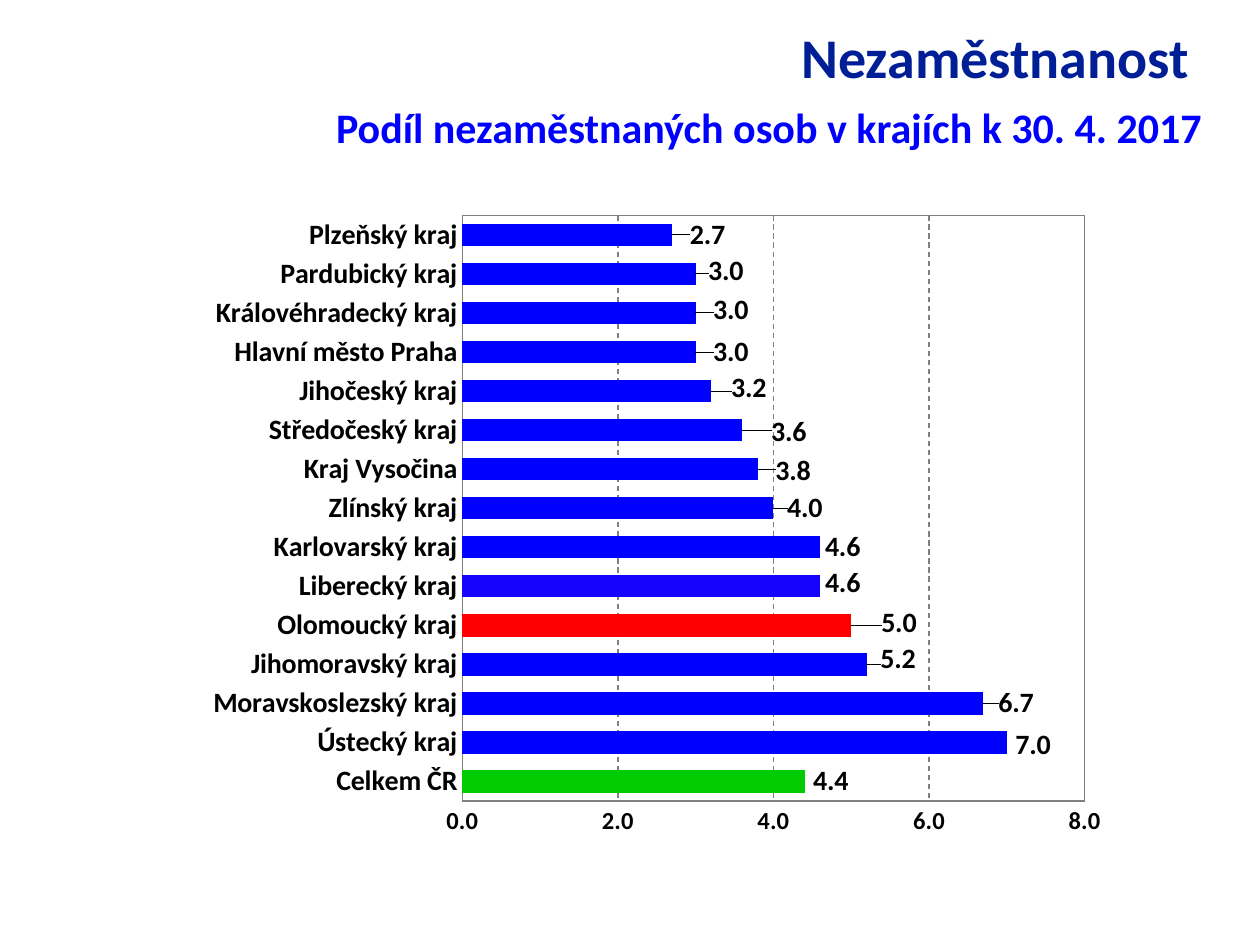
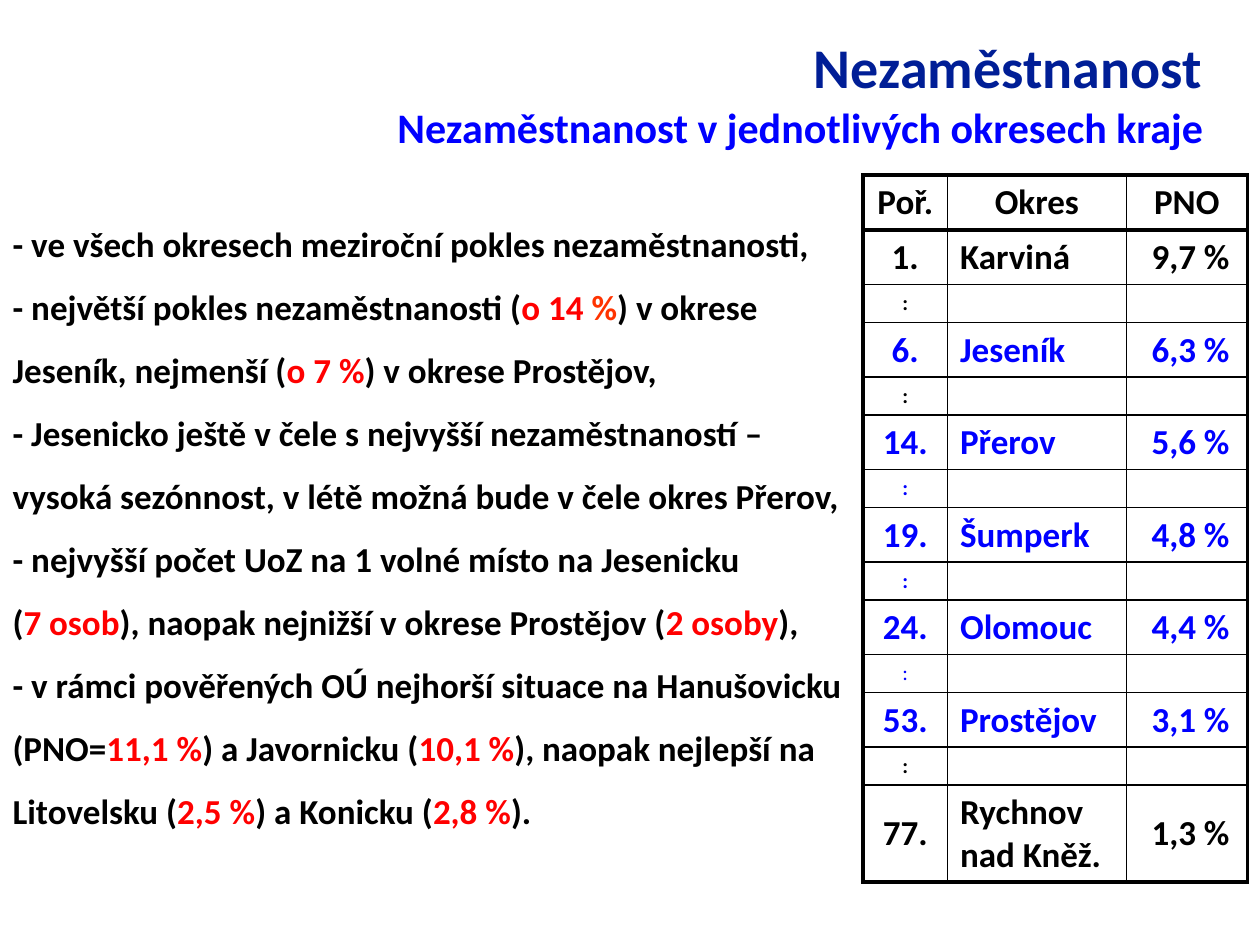
from lxml.etree import SubElement
from pptx import Presentation
from pptx.chart.data import CategoryChartData
from pptx.dml.color import RGBColor
from pptx.enum.chart import XL_CHART_TYPE, XL_LABEL_POSITION, XL_TICK_MARK
from pptx.enum.dml import MSO_LINE
from pptx.enum.text import MSO_ANCHOR, PP_ALIGN
from pptx.oxml import parse_xml
from pptx.oxml.ns import nsdecls, qn
from pptx.util import Inches, Pt

NAVY = RGBColor(0x00, 0x1E, 0x96)
BLUE = RGBColor(0x00, 0x00, 0xFF)
VIOLET = RGBColor(0x15, 0x03, 0xFD)
RED = RGBColor(0xFF, 0x00, 0x00)
ORANGE = RGBColor(0xFF, 0x33, 0x00)
GREEN = RGBColor(0x00, 0xCC, 0x00)
GRAY = RGBColor(0x80, 0x80, 0x80)
BLACK = RGBColor(0, 0, 0)
FACE = "Calibri"
TITLE = "Nezaměstnanost"

# region, share, label shift right and down in inches
REGIONS = [
    ("Celkem ČR", 4.4, 0.03, 0),
    ("Ústecký kraj", 7.0, 0.03, 0.02),
    ("Moravskoslezský kraj", 6.7, 0.08, 0),
    ("Jihomoravský kraj", 5.2, 0.07, -0.04),
    ("Olomoucký kraj", 5.0, 0.2, -0.02),
    ("Liberecký kraj", 4.6, 0, -0.02),
    ("Karlovarský kraj", 4.6, 0, 0),
    ("Zlínský kraj", 4.0, 0.07, 0),
    ("Kraj Vysočina", 3.8, 0.1, 0.02),
    ("Středočeský kraj", 3.6, 0.19, 0.02),
    ("Jihočeský kraj", 3.2, 0.12, -0.02),
    ("Hlavní město Praha", 3.0, 0.1, 0),
    ("Královéhradecký kraj", 3.0, 0.1, -0.02),
    ("Pardubický kraj", 3.0, 0.06, -0.02),
    ("Plzeňský kraj", 2.7, 0.1, 0),
]
ACCENTS = {"Celkem ČR": GREEN, "Olomoucký kraj": RED, "Liberecký kraj": VIOLET}
CHART = (0.98, 1.58, 8.03, 5.2)
PLOT = (0.335, 0.025, 0.615, 0.894)

POINTS = [
    [("- ve všech okresech meziroční pokles nezaměstnanosti,", BLACK)],
    [("- největší pokles nezaměstnanosti (", BLACK), ("o 14 ", RED), ("%", ORANGE),
     (") v okrese Jeseník, nejmenší (", BLACK), ("o 7 %", RED),
     (") v okrese Prostějov,", BLACK)],
    [("- Jesenicko ještě v čele s nejvyšší nezaměstnaností – vysoká sezónnost, "
      "v létě možná bude v čele okres Přerov,", BLACK)],
    [("- nejvyšší počet UoZ na 1 volné místo na Jesenicku\v(", BLACK), ("7 osob", RED),
     ("), naopak nejnižší v okrese Prostějov (", BLACK), ("2 osoby", RED), ("),", BLACK)],
    [("- v rámci pověřených OÚ nejhorší situace na Hanušovicku (PNO=", BLACK),
     ("11,1 %", RED), (") a Javornicku (", BLACK), ("10,1 %", RED),
     ("), naopak nejlepší na Litovelsku (", BLACK), ("2,5 %", RED),
     (") a Konicku (", BLACK), ("2,8 %", RED), (").", BLACK)],
]

GAP = (":", "", "")
RANKS = [
    (("Poř.", "Okres", "PNO"), BLACK),
    (("1.", "Karviná", "9,7 %"), BLACK), (GAP, BLACK),
    (("6.", "Jeseník", "6,3 %"), BLUE), (GAP, BLACK),
    (("14.", "Přerov", "5,6 %"), BLUE), (GAP, BLUE),
    (("19.", "Šumperk", "4,8 %"), BLUE), (GAP, BLUE),
    (("24.", "Olomouc", "4,4 %"), BLUE), (GAP, BLUE),
    (("53.", "Prostějov", "3,1 %"), BLUE), (GAP, BLACK),
    (("77.", "Rychnov\nnad Kněž.", "1,3 %"), BLACK),
]
WIDTHS = (0.67, 1.42, 0.96)
THIN, THICK = Pt(1), Pt(2.25)


def place(shape, *box):
    shape.left, shape.top, shape.width, shape.height = map(Inches, box)


def style(font, size, color=BLACK, bold=True):
    font.name, font.size, font.bold = FACE, Pt(size), bold
    font.color.rgb = color


def head(shape, text, size, color):
    frame = shape.text_frame
    frame.word_wrap = True
    frame.vertical_anchor = MSO_ANCHOR.TOP
    para = frame.paragraphs[0]
    para.text, para.alignment = text, PP_ALIGN.RIGHT
    style(para.font, size, color)


def start(deck, layout, title, sub):
    """Add a slide with its title box and its subtitle line."""
    slide = deck.slides.add_slide(deck.slide_layouts[layout])
    text, box = title
    place(slide.shapes.title, *box)
    head(slide.shapes.title, text, 32, NAVY)
    text, box = sub
    head(slide.shapes.add_textbox(*map(Inches, box)), text, 24, BLUE)
    return slide


def layout(parent, index, **parts):
    """Give a chart part a manual layout, as shares of the chart."""
    for old in parent.findall(qn("c:layout")):
        parent.remove(old)
    node = parse_xml(f"<c:layout {nsdecls('c')}><c:manualLayout/></c:layout>")
    for name, val in parts.items():
        SubElement(node[0], qn("c:" + name)).set("val", str(val))
    parent.insert(index, node)


def draw_chart(slide):
    data = CategoryChartData(number_format="0.0")
    data.categories = [row[0] for row in REGIONS]
    data.add_series("Series 1", [row[1] for row in REGIONS])
    chart = slide.shapes.add_chart(
        XL_CHART_TYPE.BAR_CLUSTERED, *map(Inches, CHART), data).chart
    chart.has_legend = chart.has_title = False
    style(chart.font, 10, bold=False)

    for axis, size in ((chart.category_axis, 16), (chart.value_axis, 14)):
        axis.major_tick_mark = axis.minor_tick_mark = XL_TICK_MARK.NONE
        style(axis.tick_labels.font, size)
        axis.format.line.color.rgb = GRAY
    axis = chart.value_axis
    axis.minimum_scale, axis.maximum_scale, axis.major_unit = 0, 8, 2
    axis.tick_labels.number_format = "0.0"
    axis.tick_labels.number_format_is_linked = False
    axis.has_major_gridlines = True
    line = axis.major_gridlines.format.line
    line.color.rgb, line.width, line.dash_style = GRAY, Pt(0.75), MSO_LINE.DASH

    plot = chart.plots[0]
    plot.gap_width, plot.overlap, plot.vary_by_categories = 74, -24, False
    plot.has_data_labels = True
    series = plot.series[0]
    series.format.fill.solid()
    series.format.fill.fore_color.rgb = BLUE
    labels = series.data_labels
    labels.show_value = True
    labels.number_format, labels.number_format_is_linked = "0.0", False
    labels.position = XL_LABEL_POSITION.OUTSIDE_END
    style(labels.font, 16)
    for i, (name, _, right, down) in enumerate(REGIONS):
        point = series.points[i]
        if name in ACCENTS:
            point.format.fill.solid()
            point.format.fill.fore_color.rgb = ACCENTS[name]
        label = point.data_label
        style(label.font, 16)
        label.position = XL_LABEL_POSITION.OUTSIDE_END
    for node, (_, _, right, down) in zip(labels._element.findall(qn("c:dLbl")), REGIONS):
        layout(node, 1, x=round(right / CHART[2], 4), y=round(down / CHART[3], 4))

    x, y, w, h = PLOT
    area = chart._chartSpace.chart.plotArea
    layout(area, 0, layoutTarget="inner", xMode="edge", yMode="edge", x=x, y=y, w=w, h=h)
    area.append(parse_xml(
        f'<c:spPr {nsdecls("c", "a")}><a:noFill/><a:ln w="9525"><a:solidFill>'
        f'<a:srgbClr val="{GRAY}"/></a:solidFill></a:ln></c:spPr>'))


def border(cell, **sides):
    props = cell._tc.get_or_add_tcPr()
    for side, width in sides.items():
        props.append(parse_xml(
            f'<a:ln{side} {nsdecls("a")} w="{width}"><a:solidFill>'
            f'<a:srgbClr val="{BLACK}"/></a:solidFill></a:ln{side}>'))


def draw_table(slide):
    last = len(RANKS) - 1
    heights = [0.3 if row is GAP else 0.43 for row, _ in RANKS]
    heights[last] = 0.77
    table = slide.shapes.add_table(
        len(RANKS), len(WIDTHS), Inches(6.85), Inches(1.39),
        Inches(sum(WIDTHS)), Inches(sum(heights))).table
    table.first_row = table.horz_banding = False
    for col, width in zip(table.columns, WIDTHS):
        col.width = Inches(width)
    for r, (row, color) in enumerate(RANKS):
        table.rows[r].height = Inches(heights[r])
        size = 12 if row is GAP else 20
        for c, text in enumerate(row):
            cell = table.cell(r, c)
            border(cell, L=THICK if c == 0 else THIN, R=THICK if c == 2 else THIN,
                   T=THICK if r < 2 else THIN, B=THICK if r in (0, last) else THIN)
            cell.fill.background()
            cell.vertical_anchor = MSO_ANCHOR.MIDDLE
            cell.margin_left = Inches(0.16 if c == 2 and r else 0.1)
            cell.text = text
            for para in cell.text_frame.paragraphs:
                left = c == 1 and r > 0
                para.alignment = PP_ALIGN.LEFT if left else PP_ALIGN.CENTER
                style(para.font, size, color, not (row is GAP and r == 10))
                if not text:
                    SubElement(para._p, qn("a:endParaRPr")).set("sz", str(size * 100))


def draw_points(slide):
    body = slide.placeholders[1]
    place(body, 0, 1.55, 6.81, 5.15)
    frame = body.text_frame
    frame.word_wrap = True
    frame.vertical_anchor = MSO_ANCHOR.TOP
    for i, parts in enumerate(POINTS):
        para = frame.add_paragraph() if i else frame.paragraphs[0]
        props = para._p.get_or_add_pPr()
        props.set("marL", "0")
        props.set("indent", "0")
        SubElement(props, qn("a:buNone"))
        para.line_spacing, para.space_before = 1.5, Pt(0)
        style(para.font, 20)
        for text, color in parts:
            for k, piece in enumerate(text.split("\v")):
                if k:
                    para.add_line_break()
                run = para.add_run()
                run.text = piece
                run.font.color.rgb = color


def main():
    deck = Presentation()
    deck.slide_width, deck.slide_height = Inches(10), Inches(7.5)
    slide = start(deck, 5, (TITLE + " ", (2.4, 0.13, 7.24, 0.63)),
                  ("Podíl nezaměstnaných osob v krajích k 30. 4. 2017",
                   (2.4, 0.76, 7.24, 0.63)))
    draw_chart(slide)
    slide = start(deck, 1, (TITLE, (2.4, 0.21, 7.24, 0.79)),
                  ("Nezaměstnanost v jednotlivých okresech kraje",
                   (2.05, 0.76, 7.6, 0.63)))
    draw_points(slide)
    draw_table(slide)
    deck.save("out.pptx")


if __name__ == "__main__":
    main()
